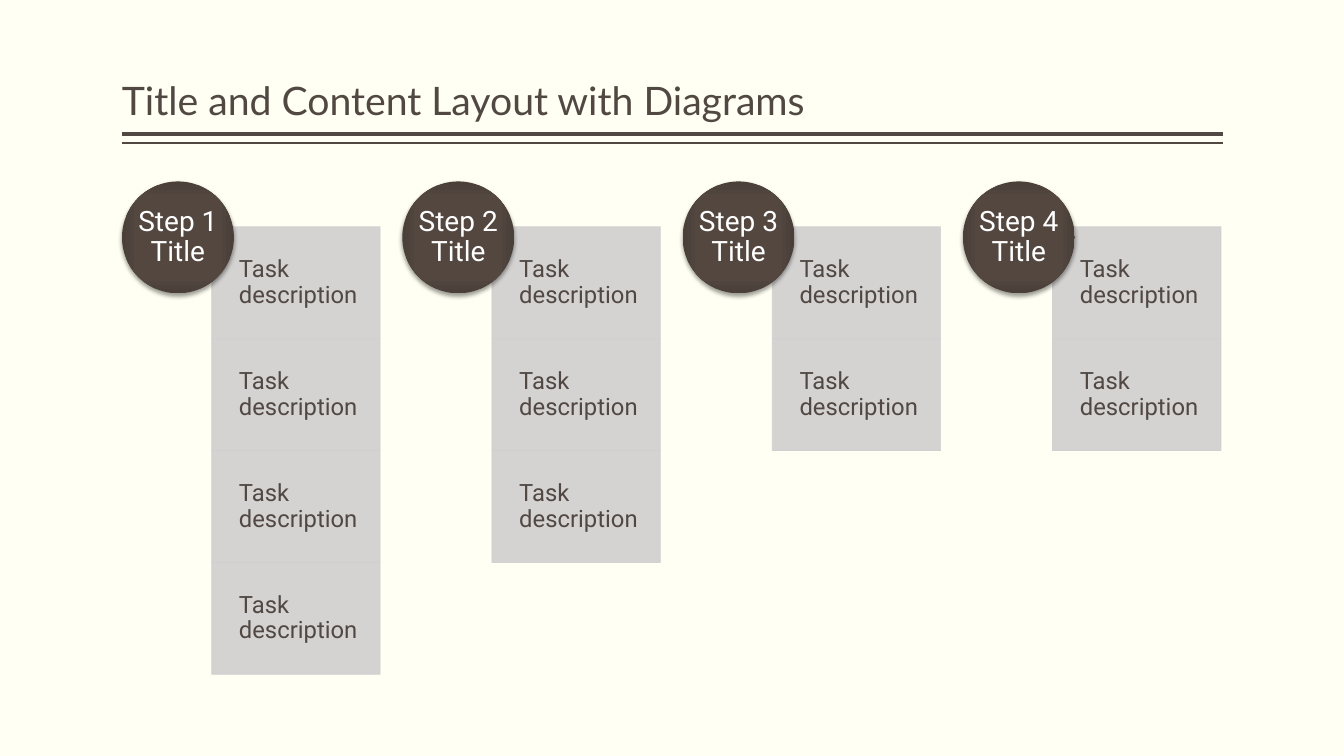
from lxml import etree
from pptx import Presentation
from pptx.dml.color import RGBColor
from pptx.enum.shapes import MSO_CONNECTOR as Connector, MSO_SHAPE as Shape
from pptx.enum.text import MSO_ANCHOR as Anchor, MSO_AUTO_SIZE as AutoSize, PP_ALIGN as Align
from pptx.oxml import parse_xml
from pptx.oxml.ns import nsdecls, qn
from pptx.util import Inches, Pt

COLORS = {
    "background": "FFFFF3",
    "text": "514843",
    "task": "D0CFCF",
    "circle_center": "544740",
    "circle_middle": "534740",
    "circle_edge": "4A3F39",
    "circle_text": "FFFFFF",
    "shadow": "000000",
}
LEFT, RIGHT = 1.21, 12.13
STEP_TOP, STEP_SIZE, STEP_PITCH = 1.8, 1.11, 2.78
LABEL_MARGIN = 0.1
TASK_TOP, TASK_OFFSET = 2.25, 0.89
TASK_WIDTH, TASK_HEIGHT = 1.67, 1.11
TASK_COUNTS = [4, 3, 2, 2]


def rgb(name):
    return RGBColor.from_string(COLORS[name])


def write_text(shape, text, size, font, color, align, anchor, insets):
    frame = shape.text_frame
    frame.text = text
    frame.word_wrap = True
    frame.auto_size = AutoSize.NONE
    frame.vertical_anchor = anchor
    frame.margin_left, frame.margin_top, frame.margin_right, frame.margin_bottom = map(Inches, insets)
    paragraph = frame.paragraphs[0]
    paragraph.alignment = align
    paragraph.line_spacing = 0.9
    paragraph.font.size = Pt(size)
    paragraph.font.name = font
    paragraph.font.color.rgb = rgb(color)


prs = Presentation()
prs.slide_width, prs.slide_height = Inches(13.33), Inches(7.5)
slide = prs.slides.add_slide(prs.slide_layouts[5])
slide.background.fill.solid()
slide.background.fill.fore_color.rgb = rgb("background")

title = slide.shapes.title
title.left, title.top = Inches(LEFT), Inches(0.08)
title.width, title.height = Inches(RIGHT - LEFT), Inches(1.2)
write_text(title, "Title and Content Layout with Diagrams", 28, "Lato", "text",
           Align.LEFT, Anchor.BOTTOM, (0, 0.05, 0, 0.05))

for rule_y, rule_weight in [(1.33, 3), (1.42, 1)]:
    rule = slide.shapes.add_connector(
        Connector.STRAIGHT, Inches(LEFT), Inches(rule_y), Inches(RIGHT), Inches(rule_y))
    rule.line.color.rgb = rgb("text")
    rule.line.width = Pt(rule_weight)
    etree.SubElement(rule._element.spPr, qn("a:effectLst"))

for column, task_count in enumerate(TASK_COUNTS):
    step_left = LEFT + column * STEP_PITCH

    for row in range(task_count):
        task = slide.shapes.add_shape(
            Shape.RECTANGLE, Inches(step_left + TASK_OFFSET), Inches(TASK_TOP + row * TASK_HEIGHT),
            Inches(TASK_WIDTH), Inches(TASK_HEIGHT))
        task.shadow.inherit = False
        task.fill.solid()
        task.fill.fore_color.rgb = rgb("task")
        task.line.color.rgb = rgb("task")
        task.line.width = Pt(0.5)
        for task_color in task._element.spPr.iter(qn("a:srgbClr")):
            etree.SubElement(task_color, qn("a:alpha"), val="90000")
        write_text(task, "Task description", 17, "Roboto", "text",
                   Align.LEFT, Anchor.MIDDLE, (0.27, 0.13, 0.13, 0.13))

    step = slide.shapes.add_shape(
        Shape.OVAL, Inches(step_left), Inches(STEP_TOP), Inches(STEP_SIZE), Inches(STEP_SIZE))
    step.shadow.inherit = False
    step.line.fill.background()
    step_properties = step._element.spPr
    step_properties.insert(2, parse_xml(
        f'<a:gradFill {nsdecls("a")} rotWithShape="1"><a:gsLst>'
        f'<a:gs pos="0"><a:srgbClr val="{COLORS["circle_center"]}"/></a:gs>'
        f'<a:gs pos="71000"><a:srgbClr val="{COLORS["circle_middle"]}"/></a:gs>'
        f'<a:gs pos="100000"><a:srgbClr val="{COLORS["circle_edge"]}"/></a:gs>'
        '</a:gsLst><a:path path="rect">'
        '<a:fillToRect l="50000" t="50000" r="50000" b="50000"/></a:path></a:gradFill>'))
    step_properties.find(qn("a:effectLst")).append(parse_xml(
        f'<a:outerShdw {nsdecls("a")} blurRad="{Pt(3.1)}" dist="{Pt(2)}" dir="5400000" rotWithShape="0">'
        f'<a:srgbClr val="{COLORS["shadow"]}"><a:alpha val="38000"/></a:srgbClr></a:outerShdw>'))

    step_label = slide.shapes.add_textbox(
        Inches(step_left + LABEL_MARGIN), Inches(STEP_TOP + LABEL_MARGIN),
        Inches(STEP_SIZE - 2 * LABEL_MARGIN), Inches(STEP_SIZE - 2 * LABEL_MARGIN))
    write_text(step_label, f"Step {column + 1} Title", 20, "Roboto", "circle_text",
               Align.CENTER, Anchor.MIDDLE, (0, 0, 0, 0))

prs.save("out.pptx")
